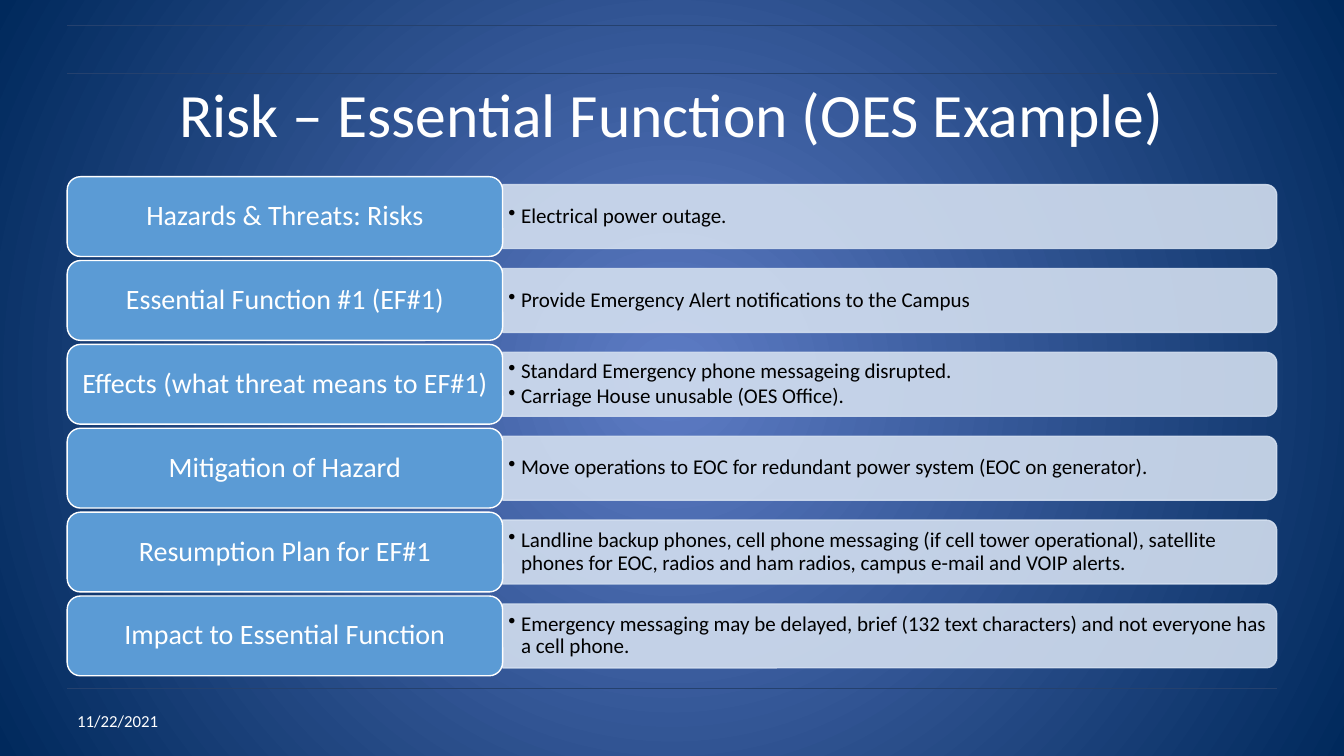
from lxml import etree
from pptx import Presentation
from pptx.dml.color import RGBColor
from pptx.enum.shapes import MSO_CONNECTOR, MSO_SHAPE
from pptx.enum.text import MSO_ANCHOR, PP_ALIGN
from pptx.oxml.ns import qn
from pptx.util import Pt

ROUND, ROUND_TOP = MSO_SHAPE.ROUNDED_RECTANGLE, MSO_SHAPE.ROUND_2_SAME_RECTANGLE
STRAIGHT = MSO_CONNECTOR.STRAIGHT
MIDDLE = MSO_ANCHOR.MIDDLE
LEFT, CENTER = PP_ALIGN.LEFT, PP_ALIGN.CENTER

WHITE, BLACK = "FFFFFF", "000000"
LABEL_FILL, BAR_FILL, RULE = "5B9BD5", "D2DEEF", "25416E"
GLOW, NAVY = "5E7CC5", "00295C"

MARGIN, CONTENT_W = 48, 864
LABEL_W, LABEL_H, BAR_H, ROW_PITCH = 311, 57, 45.6, 59.9

ROWS = [
    ("Hazards & Threats: Risks", ["Electrical power outage."]),
    ("Essential Function #1 (EF#1)",
     ["Provide Emergency Alert notifications to the Campus"]),
    ("Effects (what threat means to EF#1)",
     ["Standard Emergency phone messageing disrupted.",
      "Carriage House unusable (OES Office)."]),
    ("Mitigation of Hazard",
     ["Move operations to EOC for redundant power system (EOC on generator)."]),
    ("Resumption Plan for EF#1",
     ["Landline backup phones, cell phone messaging (if cell tower operational), "
      "satellite phones for EOC, radios and ham radios, campus e-mail and VOIP alerts."]),
    ("Impact to Essential Function",
     ["Emergency messaging may be delayed, brief (132 text characters) "
      "and not everyone has a cell phone."]),
]


def rgb(color):
    return RGBColor.from_string(color)


def set_all(target, values):
    for name, value in values.items():
        setattr(target, name, value)


def write(sp, lines, size, color, align=LEFT, insets=(7.2, 3.6), bullet=False, **para):
    tf = sp.text_frame
    x, y = map(Pt, insets)
    set_all(tf, dict(word_wrap=True, vertical_anchor=MIDDLE, margin_left=x,
                     margin_right=x, margin_top=y, margin_bottom=y))
    for i, line in enumerate(lines):
        p = tf.paragraphs[0] if i == 0 else tf.add_paragraph()
        if bullet:
            pPr = p._p.get_or_add_pPr()
            pPr.set("marL", str(Pt(9)))
            pPr.set("indent", str(-Pt(9)))
            etree.SubElement(pPr, qn("a:buChar"), char="•")
        set_all(p, dict(alignment=align, **para))
        r = p.add_run()
        r.text = line
        set_all(r.font, dict(name="Calibri", size=Pt(size)))
        r.font.color.rgb = rgb(color)


def add_text(s, x, y, w, h, *args, **kwargs):
    write(s.shapes.add_textbox(Pt(x), Pt(y), Pt(w), Pt(h)), *args, **kwargs)


def add_box(s, kind, x, y, w, h, fill, line):
    sp = s.shapes.add_shape(kind, Pt(x), Pt(y), Pt(w), Pt(h))
    sp.shadow.inherit = False
    sp.fill.solid()
    sp.fill.fore_color.rgb = rgb(fill)
    sp.line.color.rgb = rgb(line)
    sp.line.width = Pt(1)
    return sp


def add_background(s):
    fill = s.background.fill
    fill.gradient()
    for stop, color in zip(fill.gradient_stops, (GLOW, NAVY)):
        stop.color.rgb = rgb(color)
    # Turn the linear gradient into a circular one
    grad = s._element.find(".//" + qn("a:gradFill"))
    grad.remove(grad.find(qn("a:lin")))
    circle = etree.SubElement(grad, qn("a:path"), path="circle")
    etree.SubElement(circle, qn("a:fillToRect"),
                     {side: "50000" for side in "ltrb"})


def add_rule(s, x, y, w):
    line = s.shapes.add_connector(STRAIGHT, Pt(x), Pt(y), Pt(x + w), Pt(y))
    line.line.color.rgb = rgb(RULE)
    line.line.width = Pt(0.75)
    etree.SubElement(line._element.spPr, qn("a:effectLst"))


def add_row(s, x, y, w, label, points):
    # Bar: a shape with two round corners, turned so they face right
    bar_x, bar_w = x + LABEL_W, w - LABEL_W
    mid = y + LABEL_H / 2
    bar = add_box(s, ROUND_TOP, bar_x + (bar_w - BAR_H) / 2, mid - bar_w / 2,
                  BAR_H, bar_w, BAR_FILL, BAR_FILL)
    bar.rotation = 90
    for color in bar._element.spPr.iter(qn("a:srgbClr")):
        etree.SubElement(color, qn("a:alpha"), val="90000")
    add_text(s, bar_x, mid - 20.5, bar_w - 2, 41, points, 15, BLACK,
             insets=(4.2, 2.1), bullet=True, line_spacing=0.9, space_after=Pt(2.25))
    # Label
    sp = add_box(s, ROUND, x, y, LABEL_W, LABEL_H, LABEL_FILL, WHITE)
    write(sp, [label], 20, WHITE, CENTER, insets=(6, 3), line_spacing=0.9)


def add_rows(s, x, y, w):
    for i, (label, points) in enumerate(ROWS):
        add_row(s, x, y + i * ROW_PITCH, w, label, points)


def main():
    prs = Presentation()
    prs.slide_width, prs.slide_height = Pt(960), Pt(540)
    s = prs.slides.add_slide(prs.slide_layouts[6])
    add_background(s)
    for y in (492, 18, 52.5):
        add_rule(s, MARGIN, y, CONTENT_W)
    # Title and date
    add_text(s, MARGIN, 35.3, CONTENT_W, 90,
             ["Risk – Essential Function (OES Example)"], 44, WHITE, CENTER)
    add_text(s, MARGIN, 500.5, 235.5, 28.8, ["11/22/2021"], 12, WHITE)
    add_rows(s, MARGIN, 126.2, CONTENT_W)
    prs.save("out.pptx")


if __name__ == "__main__":
    main()
